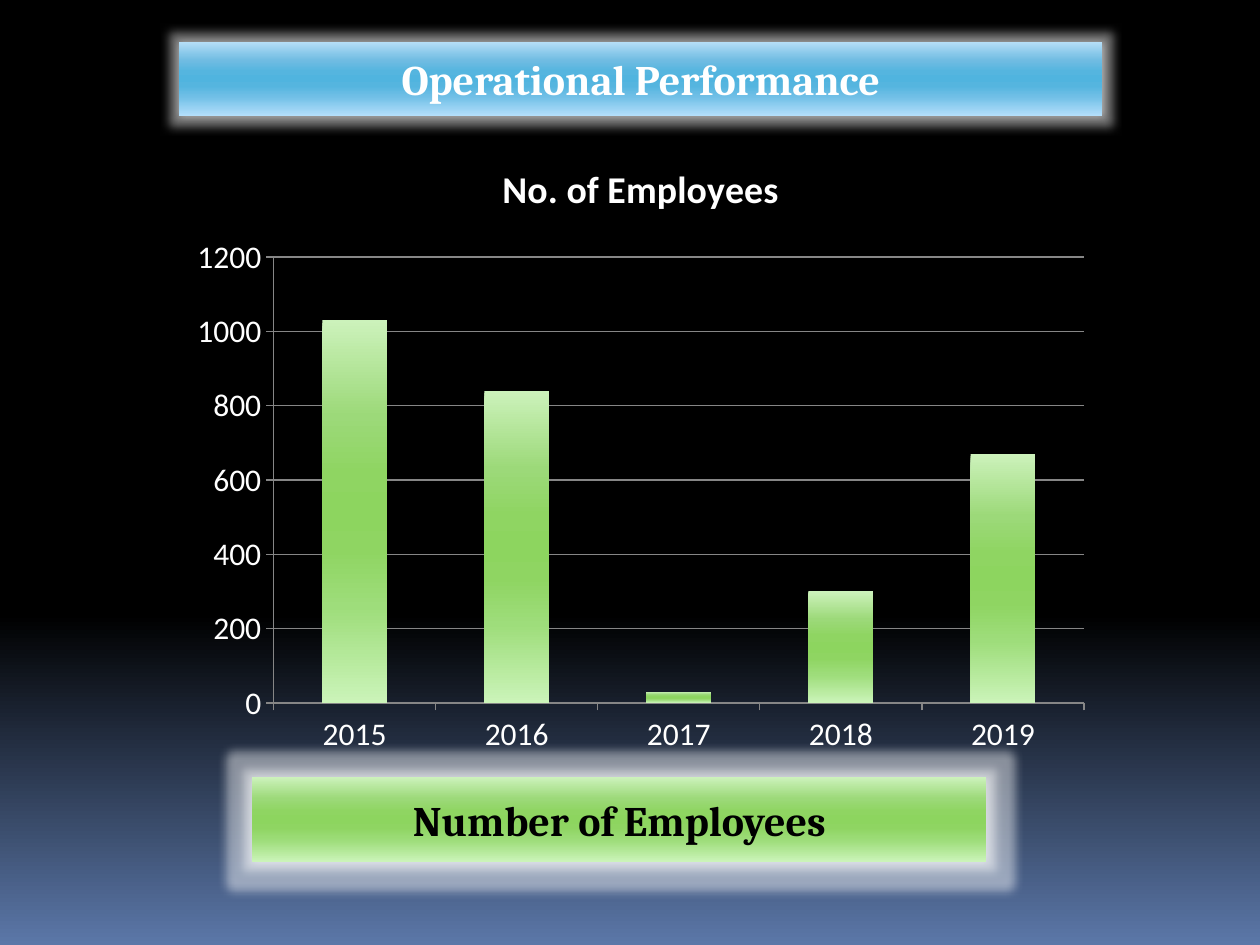
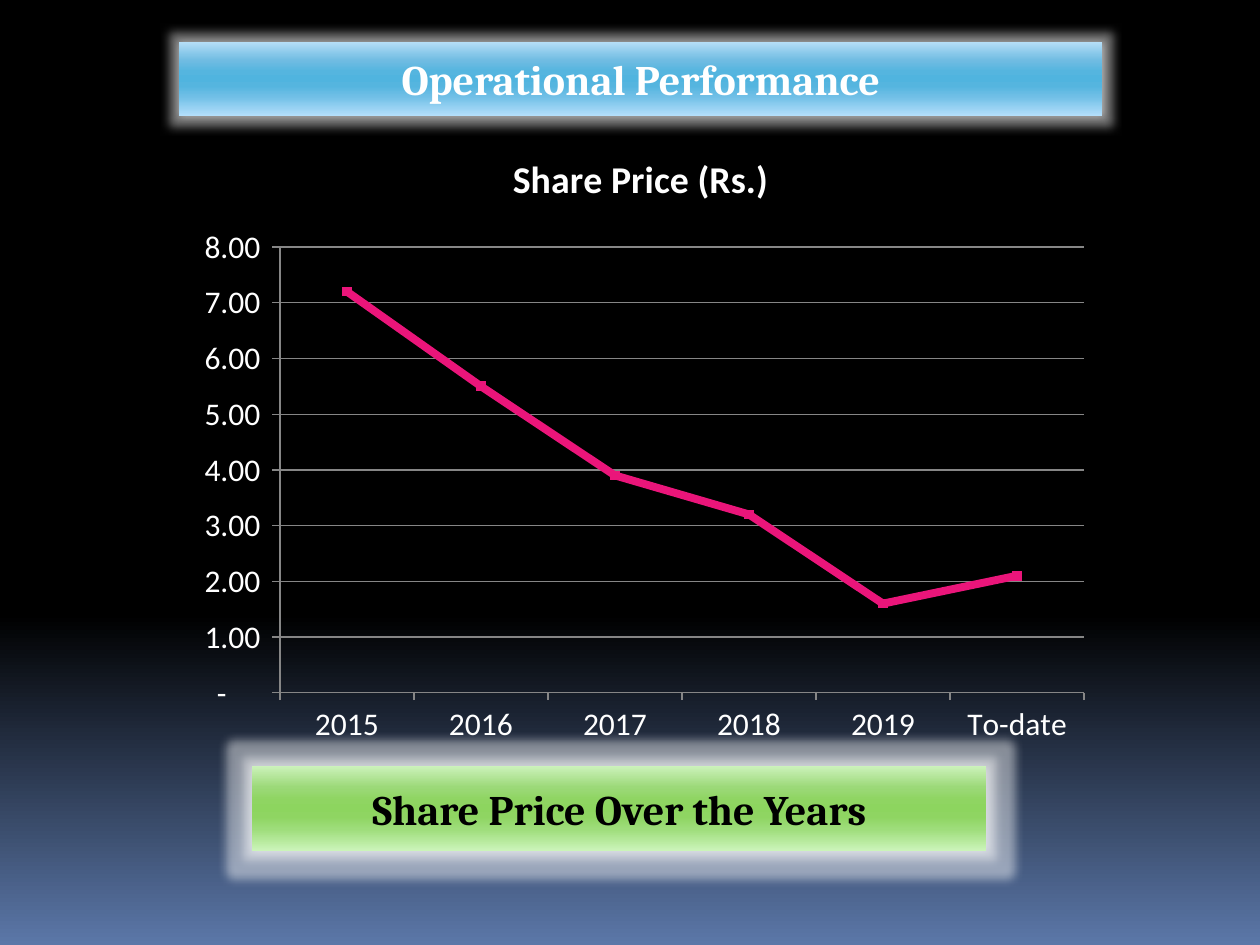
from lxml import etree
from pptx import Presentation
from pptx.chart.data import CategoryChartData
from pptx.dml.color import RGBColor
from pptx.enum.chart import XL_CHART_TYPE, XL_MARKER_STYLE, XL_TICK_MARK
from pptx.enum.shapes import MSO_SHAPE
from pptx.enum.text import MSO_ANCHOR, PP_ALIGN
from pptx.oxml.ns import qn
from pptx.util import Inches, Pt

COLUMN = XL_CHART_TYPE.COLUMN_CLUSTERED
LINE = XL_CHART_TYPE.LINE_MARKERS
SQUARE = XL_MARKER_STYLE.SQUARE
OUTSIDE = XL_TICK_MARK.OUTSIDE
RECTANGLE = MSO_SHAPE.RECTANGLE
MIDDLE = MSO_ANCHOR.MIDDLE
CENTER = PP_ALIGN.CENTER

WHITE = RGBColor(0xFF, 0xFF, 0xFF)
BLACK = RGBColor(0x00, 0x00, 0x00)
PINK = RGBColor(0xEA, 0x15, 0x7A)
GRAY = RGBColor(0x86, 0x86, 0x86)


def stops(positions, colors):
    return [(pos, RGBColor.from_string(c)) for pos, c in zip(positions, colors.split())]


BAND = (0, 25, 40, 50, 60, 75, 100)
NIGHT = stops((0, 65, 100), "000000 000000 5B77A8")
BLUE = stops(BAND, "B7DFF8 70BCE2 55B5DF 50B4DF 55B5DF 72C0E7 B4DFFB")
GREEN = stops(BAND, "CCF2BB 9CD979 8FD562 8DD55F 8FD562 9EDD7B CBF4B9")

HEADING_FONT, BODY_FONT = "Cambria", "Calibri"
MONEY = '_(* #,##0.00_);_(* \\(#,##0.00\\);_(* "-"??_);_(@_)'
EFFECTS = (("glow", {"rad": Pt(11)}, 45), ("outerShdw", {"blurRad": Pt(4.5), "dist": 0}, 48))

SLIDES = [
    {"type": COLUMN, "top": 1.08, "caption": "Number of Employees", "caption_top": 6.17,
     "series": "No. of Employees", "format": "General",
     "points": {"2015": 1030, "2016": 840, "2017": 30, "2018": 300, "2019": 670}},
    {"type": LINE, "top": 1, "caption": "Share Price Over the Years", "caption_top": 6.08,
     "series": "Share Price (Rs.)", "format": MONEY,
     "points": {"2015": 7.2, "2016": 5.5, "2017": 3.9, "2018": 3.2, "2019": 1.6,
                "To-date": 2.1}},
]


def fill_gradient(fill, owner, colors):
    """Give fill, whose XML lies inside owner, a top-to-bottom gradient."""
    fill.gradient()
    fill.gradient_angle = 270
    gs_list = owner.find(".//" + qn("a:gsLst"))
    for gs in list(gs_list):
        gs_list.remove(gs)
    for pos, color in colors:
        gs = etree.SubElement(gs_list, qn("a:gs"), pos=str(pos * 1000))
        etree.SubElement(gs, qn("a:srgbClr"), val=str(color))


prs = Presentation()
prs.slide_width, prs.slide_height = Inches(10), Inches(7.5)
master = prs.slide_master
fill_gradient(master.background.fill, master.element, NIGHT)

for item in SLIDES:
    slide = prs.slides.add_slide(prs.slide_layouts[5])

    # Chart
    data = CategoryChartData(number_format=item["format"])
    data.categories = list(item["points"])
    data.add_series(item["series"], list(item["points"].values()))
    chart = slide.shapes.add_chart(item["type"], Inches(1.42), Inches(item["top"]),
                                   Inches(7.33), Inches(5), data).chart
    chart.font.size, chart.font.name = Pt(18), BODY_FONT
    chart.font.color.rgb = WHITE
    chart.has_legend = False
    chart.has_title = True
    r = chart.chart_title.text_frame.paragraphs[0].add_run()
    r.text = item["series"]
    r.font.size, r.font.name, r.font.bold = Pt(21.6), BODY_FONT, True
    r.font.color.rgb = WHITE

    value_axis = chart.value_axis
    value_axis.has_major_gridlines = True
    value_axis.tick_labels.number_format = item["format"]
    value_axis.tick_labels.number_format_is_linked = False
    for axis in (chart.category_axis, value_axis):
        axis.major_tick_mark = OUTSIDE
        axis.format.line.color.rgb = GRAY
    value_axis.major_gridlines.format.line.color.rgb = GRAY

    plot = chart.plots[0]
    plot.vary_by_categories = False
    series = plot.series[0]
    if item["type"] == COLUMN:
        plot.gap_width = 150
        fill_gradient(series.format.fill, series.format.element
                      if hasattr(series.format, "element") else series._element, GREEN)
    else:
        series.smooth = False
        series.format.line.color.rgb = PINK
        series.format.line.width = Pt(4.5)
        series.marker.style, series.marker.size = SQUARE, 5
        series.marker.format.fill.solid()
        series.marker.format.fill.fore_color.rgb = PINK
        series.marker.format.line.color.rgb = PINK

    # Glowing title and caption banners
    title = slide.shapes.title
    title.left, title.top = Inches(1.42), Inches(0.33)
    title.width, title.height = Inches(7.33), Inches(0.59)
    caption = slide.shapes.add_shape(RECTANGLE, Inches(2), Inches(item["caption_top"]),
                                     Inches(5.83), Inches(0.67))
    for sp, text, color, colors in ((title, "Operational Performance", WHITE, BLUE),
                                    (caption, item["caption"], BLACK, GREEN)):
        fill_gradient(sp.fill, sp.element.spPr, colors)
        sp.line.fill.background()
        sp.shadow.inherit = False
        effects = sp.element.spPr.find(qn("a:effectLst"))
        for tag, sizes, alpha in EFFECTS:
            effect = etree.SubElement(effects, qn("a:" + tag),
                                      {k: str(int(v)) for k, v in sizes.items()})
            clr = etree.SubElement(effect, qn("a:srgbClr"), val=str(WHITE))
            etree.SubElement(clr, qn("a:alpha"), val=str(alpha * 1000))
        tf = sp.text_frame
        tf.word_wrap = True
        tf.vertical_anchor = MIDDLE
        p = tf.paragraphs[0]
        p.alignment = CENTER
        r = p.add_run()
        r.text = text
        r.font.size, r.font.name, r.font.bold = Pt(24), HEADING_FONT, True
        r.font.color.rgb = color

prs.save("out.pptx")
